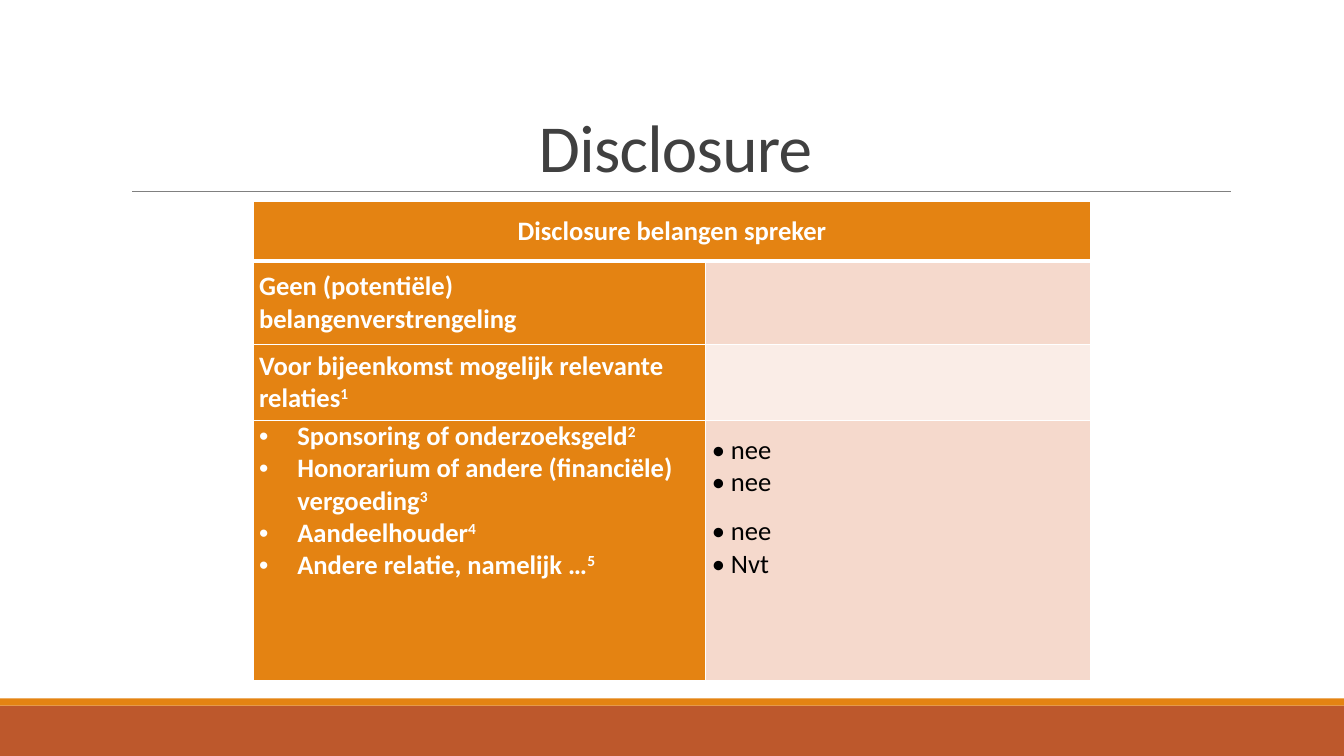
from lxml import etree
from pptx import Presentation
from pptx.dml.color import RGBColor
from pptx.enum.shapes import MSO_CONNECTOR, MSO_SHAPE
from pptx.enum.text import MSO_ANCHOR, PP_ALIGN
from pptx.oxml.ns import qn
from pptx.util import Inches, Pt

RECTANGLE, STRAIGHT = MSO_SHAPE.RECTANGLE, MSO_CONNECTOR.STRAIGHT
TOP, MIDDLE, BOTTOM = MSO_ANCHOR.TOP, MSO_ANCHOR.MIDDLE, MSO_ANCHOR.BOTTOM
LEFT, CENTER = PP_ALIGN.LEFT, PP_ALIGN.CENTER

# Content: each paragraph is (text, footnote number)
TITLE = "Disclosure"
HEADER = [("Disclosure belangen spreker", "")]
NO_CONFLICT = [("Geen (potentiële) belangenverstrengeling", "")]
RELATIONS = [("Voor bijeenkomst mogelijk relevante relaties", "1")]
RELATION_KINDS = [
    ("Sponsoring of onderzoeksgeld", "2"),
    ("Honorarium of andere (financiële) vergoeding", "3"),
    ("Aandeelhouder", "4"),
    ("Andere relatie, namelijk …", "5"),
]
ANSWERS = [("• nee", ""), ("• nee", ""), ("• nee", ""), ("• Nvt", "")]
AANDEELHOUDER_ANSWER = 2

# Format
FONT = "Calibri"
WHITE, BLACK, ORANGE, RUST = "FFFFFF", "000000", "E48312", "BD582C"
PINK, PALE_PINK, DARK_GREY, GREY = "F5D9CC", "FAEDE7", "404040", "808080"
LABEL = {"size": Pt(19), "name": FONT, "bold": True}
ANSWER = {"size": Pt(19), "name": FONT, "bold": False}
COLUMN_WIDTHS = [4.49, 3.82]
ROW_HEIGHTS = [0.59, 0.83, 0.75, 2.58]
BANDS = [(7, 0.5, RUST), (6.93, 0.07, ORANGE)]

# Cells: row, column, paragraphs, fill, text colour, font, alignment, anchor, top margin
CELLS = [
    (0, 0, HEADER, ORANGE, WHITE, LABEL, CENTER, MIDDLE, 0),
    (0, 1, [], ORANGE, WHITE, LABEL, CENTER, MIDDLE, 0),
    (1, 0, NO_CONFLICT, ORANGE, WHITE, LABEL, LEFT, MIDDLE, 0),
    (1, 1, [], PINK, BLACK, ANSWER, LEFT, TOP, 0),
    (2, 0, RELATIONS, ORANGE, WHITE, LABEL, LEFT, MIDDLE, 0),
    (2, 1, [], PALE_PINK, BLACK, ANSWER, LEFT, TOP, 0),
    (3, 0, RELATION_KINDS, ORANGE, WHITE, LABEL, LEFT, TOP, 0),
    (3, 1, ANSWERS, PINK, BLACK, ANSWER, LEFT, TOP, 0.14),
]


def paint(color_format, color):
    color_format.rgb = RGBColor.from_string(color)


def paint_fill(fill, color):
    fill.solid()
    paint(fill.fore_color, color)


def add_run(paragraph, text, font, color):
    run = paragraph.add_run()
    run.text = text
    for name, value in font.items():
        setattr(run.font, name, value)
    paint(run.font.color, color)
    return run


def add_bullet(paragraph):
    properties = paragraph._p.get_or_add_pPr()
    properties.set("marL", str(Inches(0.38)))
    properties.set("indent", str(-Inches(0.38)))
    etree.SubElement(properties, qn("a:buFont")).set("typeface", "Arial")
    etree.SubElement(properties, qn("a:buChar")).set("char", "•")


def add_borders(cell, bottom_width):
    properties = cell._tc.get_or_add_tcPr()
    widths = [("a:lnL", 1), ("a:lnR", 1), ("a:lnT", 1), ("a:lnB", bottom_width)]
    for index, (tag, width) in enumerate(widths):
        line = etree.Element(qn(tag), w=str(Pt(width)))
        fill = etree.SubElement(line, qn("a:solidFill"))
        etree.SubElement(fill, qn("a:srgbClr")).set("val", WHITE)
        properties.insert(index, line)


def fill_cell(cell, paragraphs, color, font, alignment):
    frame = cell.text_frame
    for index, (text, footnote) in enumerate(paragraphs):
        paragraph = frame.paragraphs[0] if index == 0 else frame.add_paragraph()
        paragraph.alignment = alignment
        add_run(paragraph, text, font, color)
        if footnote:
            number = add_run(paragraph, footnote, font, color)
            number._r.get_or_add_rPr().set("baseline", "30000")
        if paragraphs is RELATION_KINDS:
            add_bullet(paragraph)
        if paragraphs is ANSWERS and index == AANDEELHOUDER_ANSWER:
            paragraph.space_before = Pt(12)


presentation = Presentation()
presentation.slide_width, presentation.slide_height = Inches(13.33), Inches(7.5)
slide = presentation.slides.add_slide(presentation.slide_layouts[6])
shapes = slide.shapes

# Bands at the foot
for top, height, color in BANDS:
    band = shapes.add_shape(RECTANGLE, 0, Inches(top), presentation.slide_width, Inches(height))
    band.shadow.inherit = False
    paint_fill(band.fill, color)
    band.line.fill.background()

# Title and its rule
rule = shapes.add_connector(STRAIGHT, Inches(1.31), Inches(1.9), Inches(12.21), Inches(1.9))
paint(rule.line.color, GREY)
rule.line.width = Pt(0.5)
etree.SubElement(rule._element.spPr, qn("a:effectLst"))

title_box = shapes.add_textbox(Inches(1.2), Inches(0.31), Inches(11), Inches(1.59))
title_frame = title_box.text_frame
title_frame.word_wrap = True
title_frame.vertical_anchor = BOTTOM
title = title_frame.paragraphs[0]
title.alignment = CENTER
title.line_spacing = 0.85
title_run = add_run(title, TITLE, {"size": Pt(48), "name": FONT}, DARK_GREY)
title_run._r.get_or_add_rPr().set("spc", "-50")

# Table
table = shapes.add_table(
    len(ROW_HEIGHTS), len(COLUMN_WIDTHS), Inches(2.51), Inches(2),
    Inches(sum(COLUMN_WIDTHS)), Inches(sum(ROW_HEIGHTS))).table
table.horz_banding = False
for column, width in zip(table.columns, COLUMN_WIDTHS):
    column.width = Inches(width)
for row, height in zip(table.rows, ROW_HEIGHTS):
    row.height = Inches(height)
table.cell(0, 0).merge(table.cell(0, 1))

for row, column, paragraphs, fill, color, font, alignment, anchor, margin_top in CELLS:
    cell = table.cell(row, column)
    cell.margin_left = cell.margin_right = Inches(0.06)
    cell.margin_top, cell.margin_bottom = Inches(margin_top), 0
    cell.vertical_anchor = anchor
    paint_fill(cell.fill, fill)
    add_borders(cell, 3 if row == 0 else 1)
    fill_cell(cell, paragraphs, color, font, alignment)

presentation.save("out.pptx")
